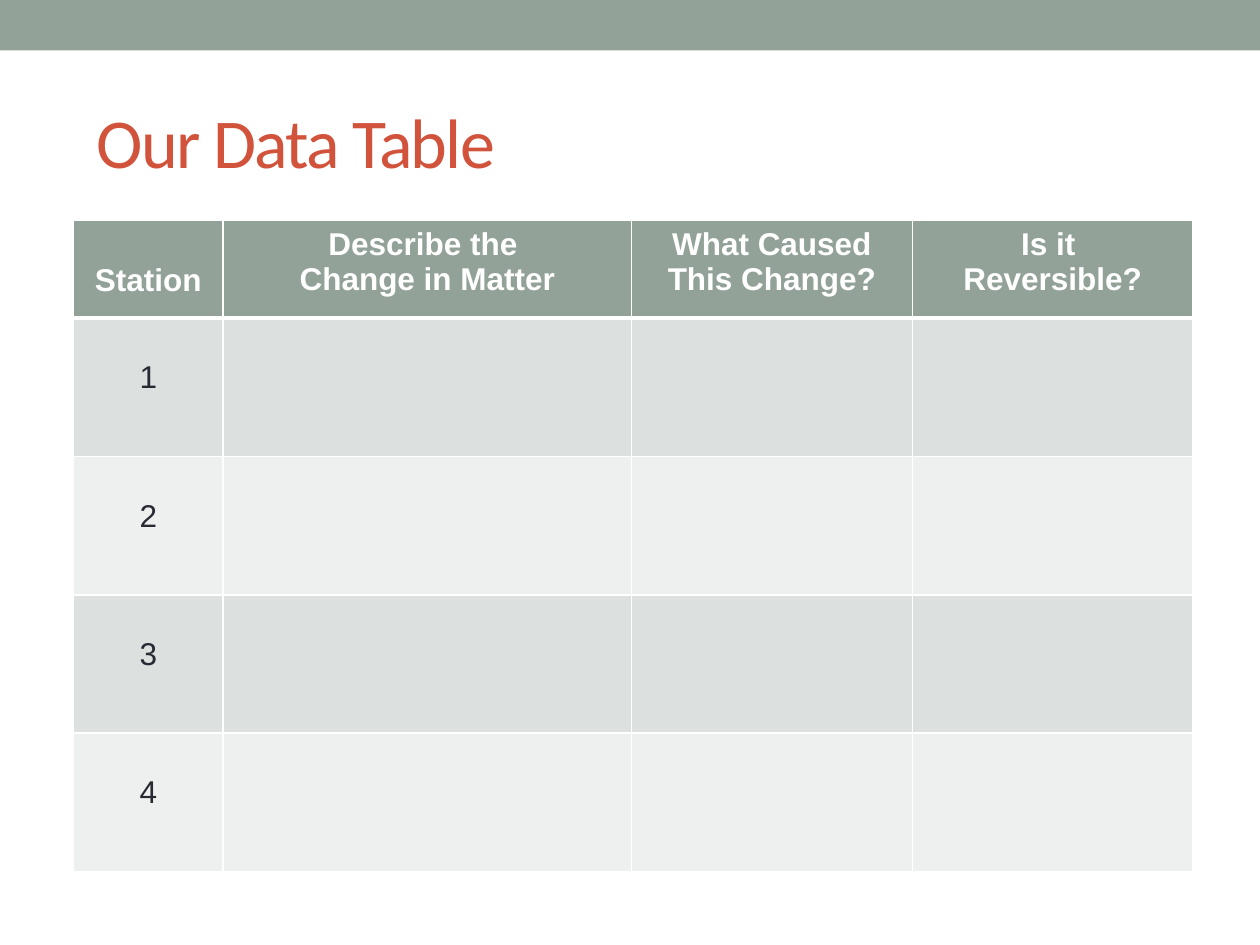
from lxml.etree import SubElement
from pptx import Presentation
from pptx.dml.color import RGBColor
from pptx.enum.shapes import MSO_SHAPE as Shape
from pptx.enum.text import MSO_ANCHOR as Anchor, PP_ALIGN as Align
from pptx.oxml import parse_xml
from pptx.oxml.ns import nsdecls, qn
from pptx.util import Cm, Pt

SAGE = RGBColor(0x93, 0xA2, 0x99)
RUST = RGBColor(0xD2, 0x53, 0x3C)
INK = RGBColor(0x29, 0x29, 0x34)
WHITE = RGBColor(0xFF, 0xFF, 0xFF)
BANDS = (RGBColor(0xDC, 0xE0, 0xDE), RGBColor(0xEE, 0xF0, 0xEF))

HEADINGS = (
    "Station",
    "Describe the \vChange in Matter",
    "What Caused This Change?",
    "Is it \vReversible?",
)
STATIONS = ("1", "2", "3", "4")
COLUMN_WIDTHS = (3.02, 8.23, 5.66, 5.66)
HEADER_HEIGHT, ROW_HEIGHT = 1.96, 2.79
LOWERED_MARGIN = Cm(0.85)


def set_font(para, name, size, color, bold=False):
    """Format the font of a whole paragraph."""
    font = para.font
    font.name, font.size, font.bold = name, Pt(size), bold
    font.color.rgb = color


def add_band(page, width):
    """Draw the coloured band along the top of the page."""
    band = page.shapes.add_shape(Shape.RECTANGLE, 0, 0, width, Cm(1.02))
    band.shadow.inherit = False
    band.fill.solid()
    band.fill.fore_color.rgb = SAGE
    band.line.fill.background()


def set_title(page, text):
    """Place and format the title placeholder."""
    title = page.shapes.title
    title.left, title.top, title.width, title.height = (
        Cm(1.7), Cm(1.47), Cm(22.43), Cm(2.74))
    frame = title.text_frame
    frame.text = text
    frame.vertical_anchor = Anchor.MIDDLE
    para = frame.paragraphs[0]
    para.alignment = Align.LEFT
    set_font(para, "Calibri", 40, RUST)
    para.runs[0]._r.get_or_add_rPr().set("spc", "-100")


def set_borders(cell, top, bottom):
    """Give a cell white borders, with top and bottom widths in points."""
    properties = cell._tc.get_or_add_tcPr()
    sides = {"lnL": 1, "lnR": 1, "lnT": top, "lnB": bottom}
    for index, (side, width) in enumerate(sides.items()):
        line = parse_xml(f'<a:{side} {nsdecls("a")} w="{Pt(width)}"/>')
        fill = SubElement(line, qn("a:solidFill"))
        SubElement(fill, qn("a:srgbClr"), val=str(WHITE))
        properties.insert(index, line)


def fill_cell(cell, text, fill, color, bold, lowered):
    """Fill a cell and write its centred text, lowered by one line if asked."""
    cell.fill.solid()
    cell.fill.fore_color.rgb = fill
    if lowered:
        cell.margin_top = LOWERED_MARGIN
    cell.text_frame.text = text
    para = cell.text_frame.paragraphs[0]
    para.alignment = Align.CENTER
    set_font(para, "Arial", 18, color, bold)


def add_station_table(page):
    """Add the table with a heading row and one row per station."""
    rows = [HEADINGS] + [(station, "", "", "") for station in STATIONS]
    heights = [HEADER_HEIGHT] + [ROW_HEIGHT] * len(STATIONS)
    table = page.shapes.add_table(
        len(rows), len(HEADINGS), Cm(1.48), Cm(4.45),
        Cm(sum(COLUMN_WIDTHS)), Cm(sum(heights))).table
    for column, width in zip(table.columns, COLUMN_WIDTHS):
        column.width = Cm(width)
    for r, (texts, height) in enumerate(zip(rows, heights)):
        table.rows[r].height = Cm(height)
        header = r == 0
        fill = SAGE if header else BANDS[(r - 1) % 2]
        color = WHITE if header else INK
        for c, text in enumerate(texts):
            cell = table.cell(r, c)
            fill_cell(cell, text, fill, color, header, lowered=c == 0)
            set_borders(cell, top=3 if r == 1 else 1, bottom=3 if header else 1)


def main():
    """Build the slide and save the deck."""
    deck = Presentation()
    deck.slide_width, deck.slide_height = Cm(25.4), Cm(19.05)
    page = deck.slides.add_slide(deck.slide_layouts[5])
    add_band(page, deck.slide_width)
    set_title(page, "Our Data Table")
    add_station_table(page)
    deck.save("out.pptx")


if __name__ == "__main__":
    main()
